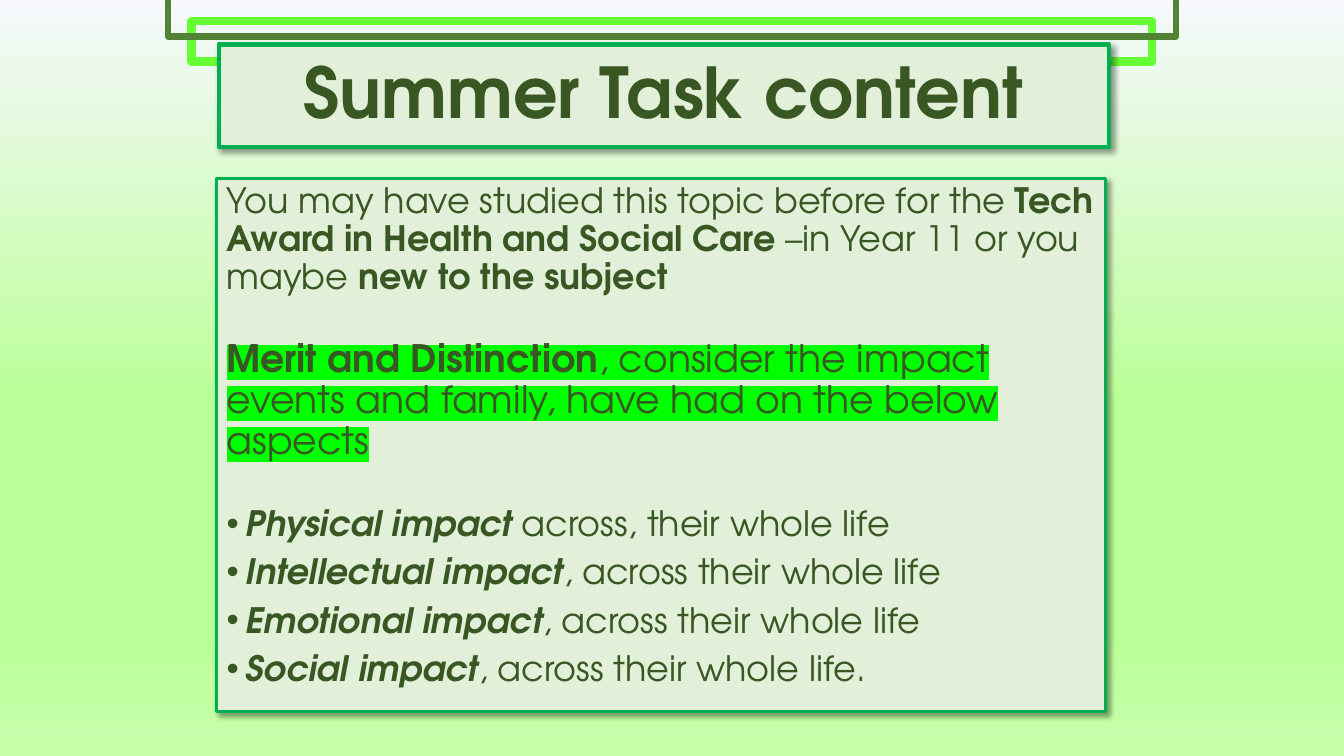
from lxml.etree import SubElement
from pptx import Presentation
from pptx.dml.color import RGBColor
from pptx.enum.shapes import MSO_SHAPE
from pptx.enum.text import MSO_ANCHOR, PP_ALIGN
from pptx.oxml.ns import qn
from pptx.util import Cm, Pt

COLORS = {"panel": "E2F0D9", "edge": "00B050", "text": "385723", "lime": "66FF33",
          "olive": "548235", "marker": "00FF00", "shadow": "000000"}
BACKGROUND = [(0, "F6F8FC"), (54, "BAFF97"), (83, "BAFF97"), (100, "C7FFAB")]
FONT = "TeX Gyre Adventor"

TITLE = "Summer Task content"
INTRO = [("You may have studied this topic before for the ", ""),
         ("Tech Award in Health and Social Care ", "b"),
         ("–in Year 11 or you maybe ", ""),
         ("new to the subject", "b")]
MERIT = [("Merit and Distinction", "bh"),
         (", consider the impact events and family, have had on the below aspects", "h")]
IMPACTS = [("Physical impact ", "across, their whole life"),
           ("Intellectual impact", ", across their whole life"),
           ("Emotional impact", ", across their whole life"),
           ("Social impact", ", across their whole life.")]

SPACE, SECTION_SPACE = 7.5, 31
BULLET_INDENT = Cm(0.48)

LIME_FRAME = (4.83, 0.53, 24.21, 1.02)
TITLE_BOX = (5.51, 1.12, 22.43, 2.59)
BODY_BOX = (5.46, 4.5, 22.4, 13.44)
OLIVE_FRAME = (4.24, -0.1, 25.4, 1.02)


def rgb(name):
    return RGBColor.from_string(COLORS[name])


def add_color(parent, value, alpha=None):
    clr = SubElement(parent, qn("a:srgbClr"), val=value)
    if alpha:
        SubElement(clr, qn("a:alpha"), val=str(alpha * 1000))


def paint_background(s):
    fill = s.background.fill
    fill.gradient()
    fill.gradient_angle = 270
    stops = s._element.find(".//" + qn("a:gsLst"))
    for stop in list(stops):
        stops.remove(stop)
    for pos, value in BACKGROUND:
        add_color(SubElement(stops, qn("a:gs"), pos=str(pos * 1000)), value)


def add_box(s, box, line, width, fill=None):
    sp = s.shapes.add_shape(MSO_SHAPE.RECTANGLE, *map(Cm, box))
    sp.shadow.inherit = False
    sp.line.color.rgb = rgb(line)
    sp.line.width = Pt(width)
    if fill:
        sp.fill.solid()
        sp.fill.fore_color.rgb = rgb(fill)
        effects = sp._element.spPr.find(qn("a:effectLst"))
        shadow = SubElement(effects, qn("a:outerShdw"), blurRad=str(Pt(4)), dist=str(Pt(3)),
                            dir=str(45 * 60000), algn="tl", rotWithShape="0")
        add_color(shadow, COLORS["shadow"], 40)
    else:
        sp.fill.background()
    return sp


def write(p, runs, size, space=0, align=PP_ALIGN.LEFT):
    p.alignment = align
    p.line_spacing = 0.9
    p.space_before = Pt(space)
    for text, style in runs:
        r = p.add_run()
        r.text = text
        r.font.size = Pt(size)
        r.font.name = FONT
        r.font.bold = "b" in style
        r.font.italic = "i" in style
        r.font.color.rgb = rgb("text")
        if "h" in style:
            rPr = r.font._element
            mark = SubElement(rPr, qn("a:highlight"))
            add_color(mark, COLORS["marker"])
            rPr.find(qn("a:solidFill")).addnext(mark)


def add_bullet(p):
    pPr = p._p.get_or_add_pPr()
    pPr.set("marL", str(BULLET_INDENT))
    pPr.set("indent", str(-BULLET_INDENT))
    SubElement(pPr, qn("a:buFont"), typeface="Arial")
    SubElement(pPr, qn("a:buChar"), char="•")


def main():
    """Build the summer task slide."""
    prs = Presentation()
    prs.slide_width, prs.slide_height = Cm(33.87), Cm(19.05)
    s = prs.slides.add_slide(prs.slide_layouts[6])
    paint_background(s)

    add_box(s, LIME_FRAME, "lime", 6)

    tf = add_box(s, TITLE_BOX, "edge", 3, "panel").text_frame
    tf.word_wrap = True
    tf.vertical_anchor = MSO_ANCHOR.MIDDLE
    write(tf.paragraphs[0], [(TITLE, "b")], 50, align=PP_ALIGN.CENTER)

    tf = add_box(s, BODY_BOX, "edge", 2.25, "panel").text_frame
    tf.word_wrap = True
    tf.vertical_anchor = MSO_ANCHOR.TOP
    write(tf.paragraphs[0], INTRO, 25, SPACE)
    write(tf.add_paragraph(), MERIT, 27, SECTION_SPACE)
    for i, (aspect, scope) in enumerate(IMPACTS):
        p = tf.add_paragraph()
        write(p, [(aspect, "bi"), (scope, "")], 25, SPACE if i else SECTION_SPACE)
        add_bullet(p)

    add_box(s, OLIVE_FRAME, "olive", 4.5)
    prs.save("out.pptx")


if __name__ == "__main__":
    main()
